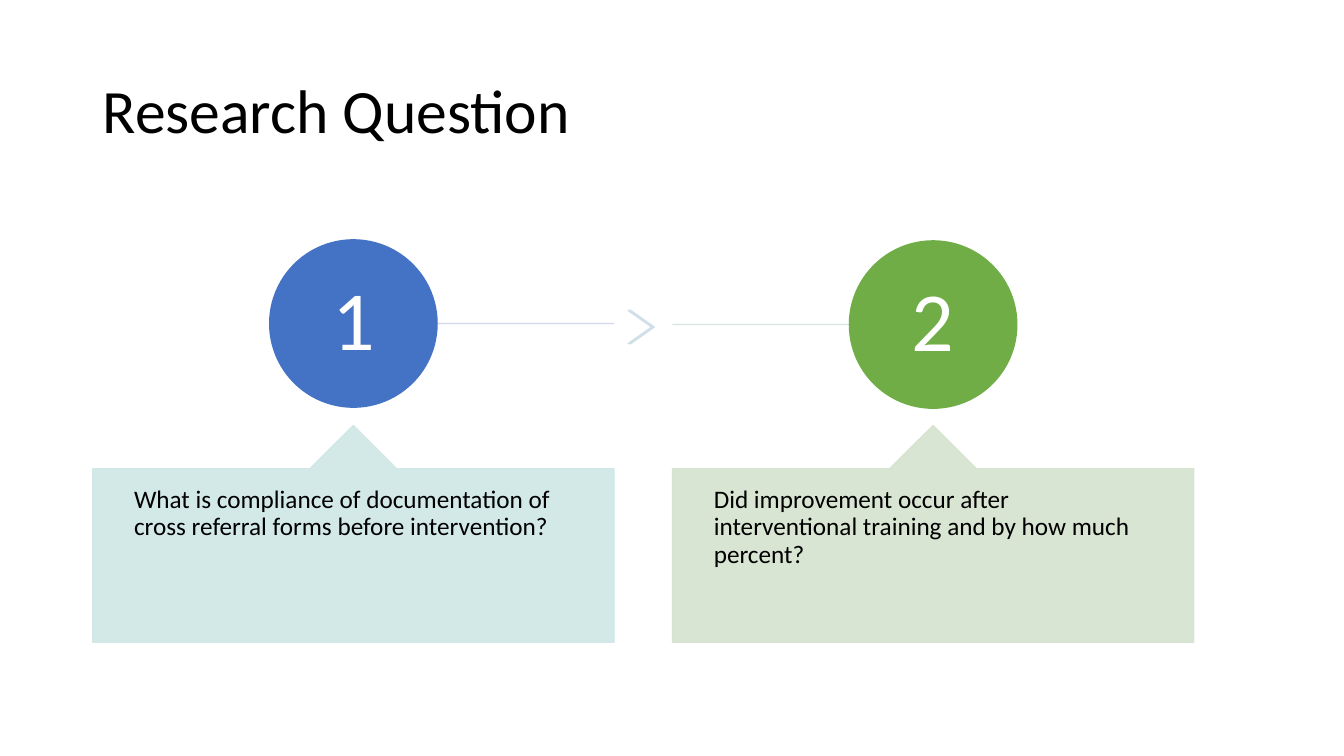
from pptx import Presentation
from pptx import util as u
from pptx.dml.color import RGBColor
from pptx.enum import shapes, text
from pptx.oxml.xmlchemy import OxmlElement

TITLE = "Research Question"
BLACK = RGBColor(0x00, 0x00, 0x00)
WHITE = RGBColor(0xFF, 0xFF, 0xFF)
BLUE = RGBColor(0x44, 0x72, 0xC4)
GREEN = RGBColor(0x70, 0xAD, 0x47)
PALE_TEAL = RGBColor(0xCF, 0xE7, 0xE6)
PALE_GREEN = RGBColor(0xD5, 0xE3, 0xCF)
PALE_LILAC = RGBColor(0xCF, 0xD5, 0xEA)
PALE_MINT = RGBColor(0xCF, 0xE6, 0xDB)
PALE_BLUE = RGBColor(0xCF, 0xDF, 0xE8)

QUESTIONS = [
    {"number": "1", "circle": BLUE, "card": PALE_TEAL, "circle_top": 2.38,
     "line": PALE_LILAC, "line_from": 3.79, "line_to": 6.09,
     "question": "What is compliance of documentation of cross referral forms before intervention?"},
    {"number": "2", "circle": GREEN, "card": PALE_GREEN, "circle_top": 2.39,
     "line": PALE_MINT, "line_from": 6.67, "line_to": 9.26,
     "question": "Did improvement occur after interventional training and by how much percent?"},
]

CARD_LEFT, CARD_TOP, CARD_WIDTH, CARD_HEIGHT = 0.92, 4.22, 5.17, 2.15
CARD_STEP = 5.75
CIRCLE_SIZE = 1.66


def set_alpha(color_format_parent):
    for color in color_format_parent.iter("{http://schemas.openxmlformats.org/drawingml/2006/main}srgbClr"):
        alpha = OxmlElement("a:alpha")
        alpha.set("val", "90000")
        color.append(alpha)


def add_shape(kind, left, top, width, height, color, adjustments=(), translucent=True):
    shape = slide.shapes.add_shape(kind, *map(u.Inches, (left, top, width, height)))
    for index, value in enumerate(adjustments):
        shape.adjustments[index] = value
    shape.shadow.inherit = False
    shape.fill.solid()
    shape.fill.fore_color.rgb = color
    shape.line.color.rgb = color
    shape.line.width = u.Pt(1)
    if translucent:
        set_alpha(shape.element.spPr)
    return shape


def write(shape, words, size, color, insets, anchor, alignment):
    frame = shape.text_frame
    frame.text = words
    frame.word_wrap = True
    frame.vertical_anchor = anchor
    frame.margin_left = frame.margin_right = u.Inches(insets[0])
    frame.margin_top = frame.margin_bottom = u.Inches(insets[1])
    paragraph = frame.paragraphs[0]
    paragraph.alignment = alignment
    paragraph.line_spacing = 0.9
    font = paragraph.runs[0].font
    font.name = "Calibri"
    font.size = u.Pt(size)
    font.color.rgb = color


def add_line(start, end, y, color):
    line = slide.shapes.add_connector(
        shapes.MSO_CONNECTOR.STRAIGHT, *map(u.Inches, (start, y, end, y)))
    line.line.color.rgb = color
    line.line.width = u.Pt(1)
    set_alpha(line.element.spPr)
    line.element.spPr.append(OxmlElement("a:effectLst"))


presentation = Presentation()
presentation.slide_width = u.Inches(13.33)
presentation.slide_height = u.Inches(7.5)
slide = presentation.slides.add_slide(presentation.slide_layouts[6])

title = slide.shapes.add_textbox(*map(u.Inches, (0.92, 0.4, 11.5, 1.45)))
write(title, TITLE, 44, BLACK, (0.1, 0.05), text.MSO_ANCHOR.MIDDLE, text.PP_ALIGN.LEFT)

add_shape(shapes.MSO_SHAPE.CHEVRON, 6.23, 3.08, 0.26, 0.33, PALE_BLUE, [0.9])

for index, item in enumerate(QUESTIONS):
    left = CARD_LEFT + index * CARD_STEP
    circle_left = left + (CARD_WIDTH - CIRCLE_SIZE) / 2
    add_line(item["line_from"], item["line_to"],
             item["circle_top"] + CIRCLE_SIZE / 2, item["line"])
    circle = add_shape(shapes.MSO_SHAPE.OVAL, circle_left, item["circle_top"],
                       CIRCLE_SIZE, CIRCLE_SIZE, item["circle"], translucent=False)
    write(circle, item["number"], 60, WHITE, (0.07, 0.07),
          text.MSO_ANCHOR.MIDDLE, text.PP_ALIGN.CENTER)
    card = add_shape(shapes.MSO_SHAPE.UP_ARROW_CALLOUT, left, CARD_TOP,
                     CARD_WIDTH, CARD_HEIGHT, item["card"], [0.4, 0.2, 0.2, 0.8])
    write(card, item["question"], 18, BLACK, (0.41, 0.18),
          text.MSO_ANCHOR.TOP, text.PP_ALIGN.LEFT)

presentation.save("out.pptx")
